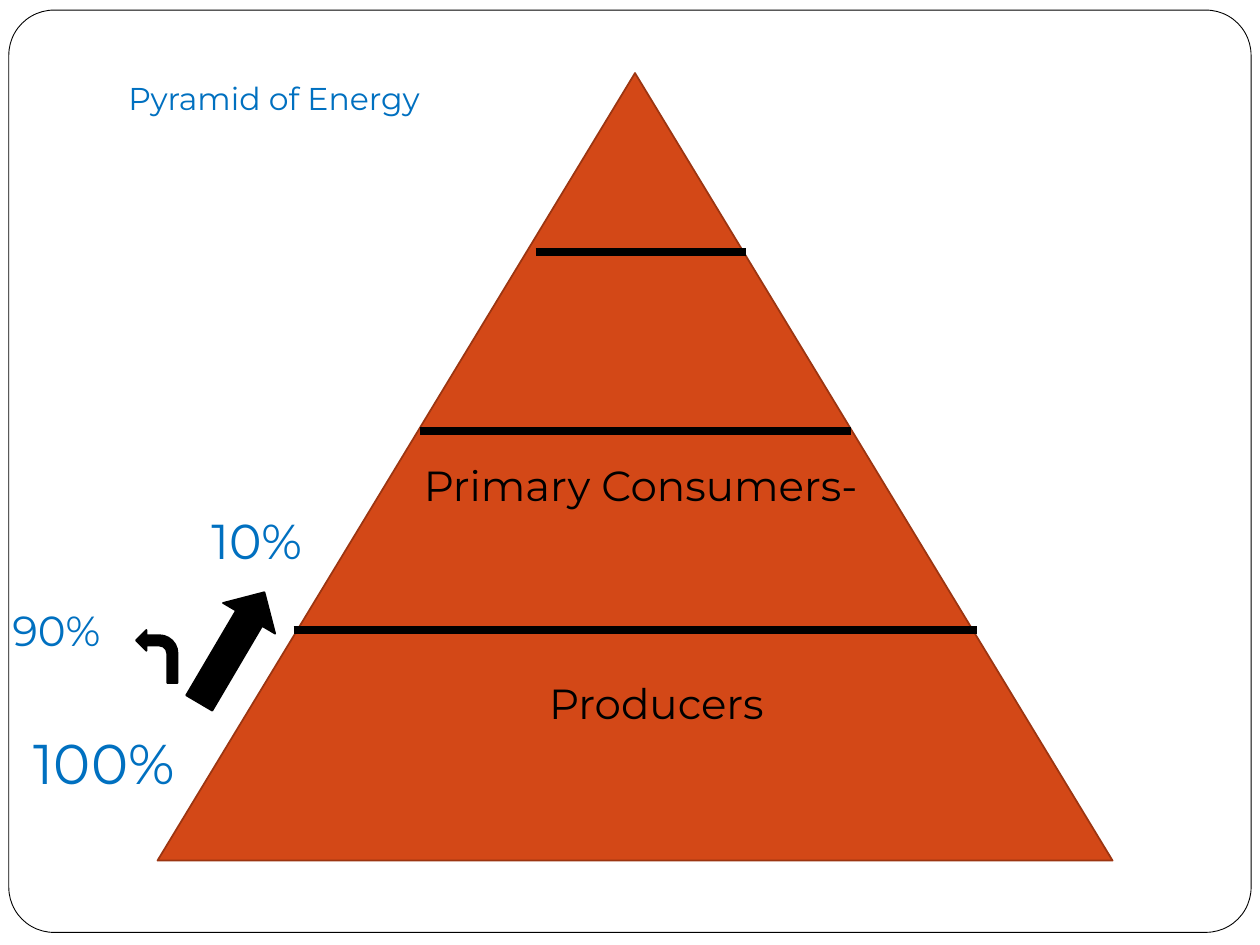
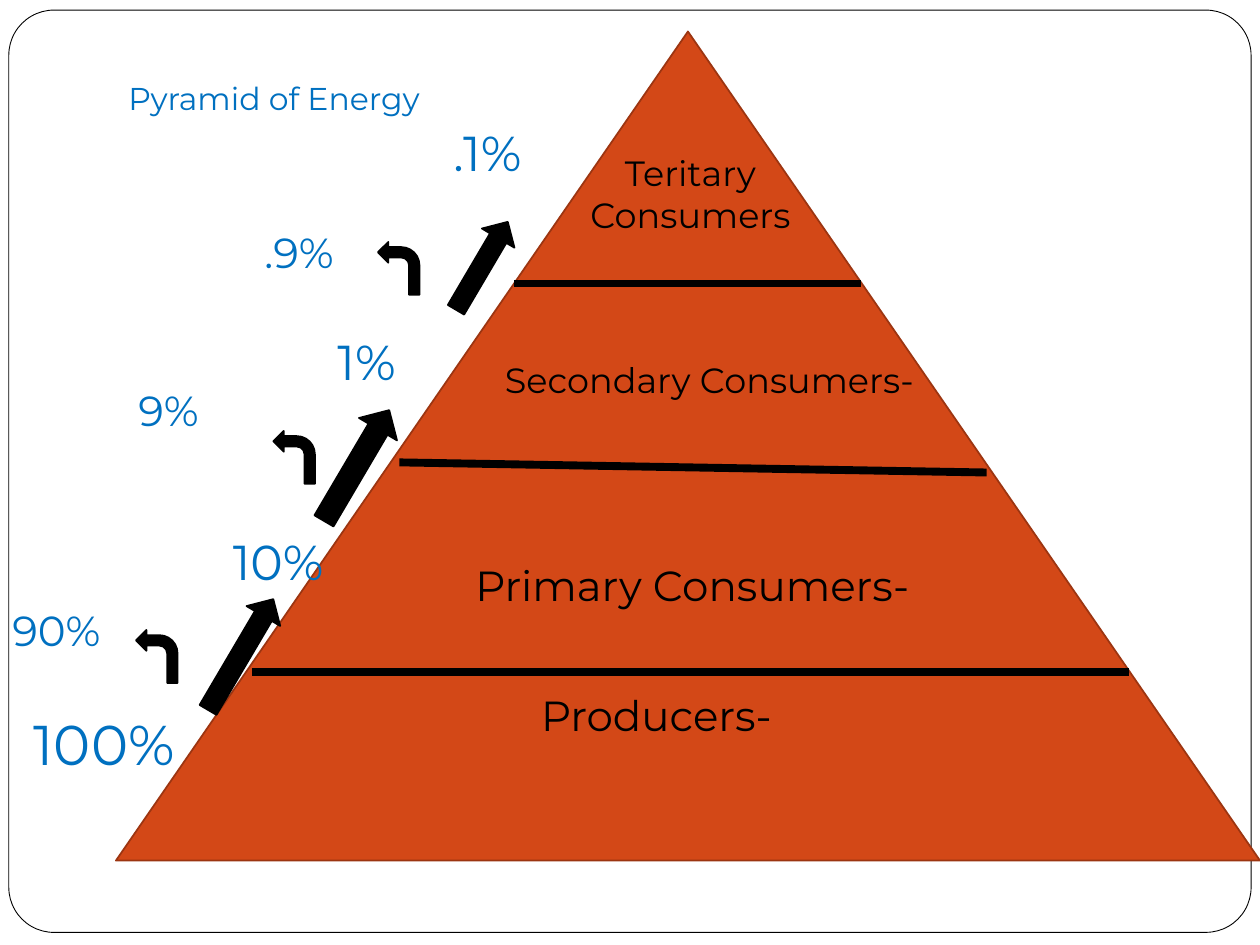
from dataclasses import dataclass

from lxml.etree import SubElement
from pptx import Presentation
from pptx.dml.color import RGBColor
from pptx.enum.shapes import MSO_CONNECTOR as Connector, MSO_SHAPE as Shape
from pptx.enum.text import MSO_AUTO_SIZE as AutoSize, PP_ALIGN as Align
from pptx.oxml.ns import qn
from pptx.util import Inches, Pt

# Shared style
FONT = "Montserrat"
WHITE, BLACK, BLUE = "FFFFFF", "000000", "0070C0"
ORANGE, RUST = "D34817", "9C3511"
ARROW_ANGLE = 300.5
LOSS_SIZE = (0.33, 0.42)


@dataclass
class Label:
    """Text box: a percentage beside the pyramid or a level inside it."""
    text: str
    left: float
    top: float
    width: float
    height: float
    size: int


@dataclass
class Divider:
    """Line between two levels."""
    left: float
    right: float
    start_y: float
    end_y: float


@dataclass
class EnergyArrow:
    """Slanted arrow from one level up to the next."""
    left: float
    top: float
    width: float
    height: float


@dataclass
class EnergyPyramid:
    """Everything that differs from slide to slide."""
    frame: tuple[float, float, float, float]
    dividers: list[Divider]
    levels: list[Label]
    percentages: list[Label]
    arrows: list[EnergyArrow]
    losses: list[tuple[float, float]]


TITLE = Label("Pyramid of Energy", 0.92, 0.58, 2.83, 0.4, 18)
LOST_BY_PRODUCERS = Label("90%", 0, 4.75, 1.33, 0.5, 24)
PRODUCER_LOSS = (1.08, 5)

PYRAMIDS = [
    EnergyPyramid(
        frame=(1.25, 0.58, 7.58, 6.25),
        dividers=[
            Divider(2.33, 7.75, 5, 5),
            Divider(3.33, 6.75, 3.42, 3.42),
            Divider(4.25, 5.92, 2, 2),
        ],
        levels=[
            Label("Primary Consumers-", 2.17, 3.6, 5.83, 0.81, 24),
            Label("Producers", 2.42, 5.33, 5.58, 0.5, 24),
        ],
        percentages=[
            Label("100%", 0.17, 5.73, 1.83, 0.64, 32),
            LOST_BY_PRODUCERS,
            Label("10%", 1.58, 4, 1.33, 0.57, 28),
        ],
        arrows=[EnergyArrow(1.33, 4.9, 1.02, 0.48)],
        losses=[PRODUCER_LOSS],
    ),
    EnergyPyramid(
        frame=(0.92, 0.25, 9.08, 6.58),
        dividers=[
            Divider(2, 8.96, 5.33, 5.33),
            Divider(3.17, 7.83, 3.67, 3.75),
            Divider(4.08, 6.83, 2.25, 2.25),
        ],
        levels=[
            Label("Producers-", 2.42, 5.42, 5.58, 0.5, 24),
            Label("Primary Consumers-", 2.58, 4.39, 5.83, 0.81, 24),
            Label("Secondary Consumers-", 3.17, 2.8, 4.92, 0.74, 20),
            Label("Teritary\nConsumers", 4.19, 1.15, 2.58, 0.77, 20),
        ],
        percentages=[
            Label("100%", 0.17, 5.58, 1.83, 0.64, 32),
            LOST_BY_PRODUCERS,
            Label("10%", 1.75, 4.17, 1.33, 0.57, 28),
            Label("9%", 1, 3, 0.92, 0.5, 24),
            Label("1%", 2.58, 2.58, 1.08, 0.57, 28),
            Label(".9%", 2, 1.75, 0.92, 0.5, 24),
            Label(".1%", 3.5, 0.92, 1.08, 0.57, 28),
        ],
        arrows=[
            EnergyArrow(1.4, 5.04, 1.02, 0.31),
            EnergyArrow(2.32, 3.52, 1.02, 0.35),
            EnergyArrow(3.42, 1.96, 0.81, 0.3),
        ],
        losses=[PRODUCER_LOSS, (2.17, 3.42), (3, 1.92)],
    ),
]


def color(value: str) -> RGBColor:
    return RGBColor.from_string(value)


def add_text(page, label: Label, *, fill: str = BLUE, align: Align = Align.LEFT) -> None:
    box = page.shapes.add_textbox(Inches(label.left), Inches(label.top),
                                  Inches(label.width), Inches(label.height))
    frame = box.text_frame
    frame.word_wrap = True
    frame.auto_size = AutoSize.SHAPE_TO_FIT_TEXT
    frame.text = label.text
    for para in frame.paragraphs:
        para.alignment = align
        for span in para.runs:
            span.font.name = FONT
            span.font.size = Pt(label.size)
            span.font.color.rgb = color(fill)


def add_filled(page, kind: Shape, left: float, top: float, width: float, height: float,
               *, fill: str = BLACK, line: str = BLACK, weight: float = 1):
    shape = page.shapes.add_shape(kind, Inches(left), Inches(top),
                                  Inches(width), Inches(height))
    shape.shadow.inherit = False
    shape.fill.solid()
    shape.fill.fore_color.rgb = color(fill)
    shape.line.color.rgb = color(line)
    shape.line.width = Pt(weight)
    return shape


def add_divider(page, divider: Divider) -> None:
    line = page.shapes.add_connector(
        Connector.STRAIGHT, Inches(divider.left), Inches(divider.start_y),
        Inches(divider.right), Inches(divider.end_y))
    line.line.color.rgb = color(BLACK)
    line.line.width = Pt(4.5)
    SubElement(line.element.spPr, qn("a:effectLst"))


def add_energy_arrow(page, arrow: EnergyArrow) -> None:
    shape = add_filled(page, Shape.RIGHT_ARROW, arrow.left, arrow.top,
                       arrow.width, arrow.height)
    shape.rotation = ARROW_ANGLE


def add_loss_arrow(page, left: float, top: float) -> None:
    shape = add_filled(page, Shape.BENT_ARROW, left, top, *LOSS_SIZE)
    for index, value in enumerate((0.25, 0.25, 0.25, 0.438)):
        shape.adjustments[index] = value
    # Mirror the arrow so that it points left
    shape.element.spPr.find(qn("a:xfrm")).set("flipH", "1")


def add_page(deck, pyramid: EnergyPyramid) -> None:
    page = deck.slides.add_slide(deck.slide_layouts[6])

    # Rounded border and title
    border = add_filled(page, Shape.ROUNDED_RECTANGLE, 0.07, 0.08, 9.86, 7.32,
                        fill=WHITE, weight=0.5)
    border.adjustments[0] = 0.049
    add_text(page, TITLE)

    # Pyramid and its levels
    add_filled(page, Shape.FLOWCHART_EXTRACT, *pyramid.frame, fill=ORANGE, line=RUST)
    for divider in pyramid.dividers:
        add_divider(page, divider)
    for level in pyramid.levels:
        add_text(page, level, fill=BLACK, align=Align.CENTER)

    # Energy passed on and lost
    for arrow in pyramid.arrows:
        add_energy_arrow(page, arrow)
    for left, top in pyramid.losses:
        add_loss_arrow(page, left, top)
    for percentage in pyramid.percentages:
        add_text(page, percentage)


def main() -> None:
    deck = Presentation()
    deck.slide_width = Inches(10)
    deck.slide_height = Inches(7.5)
    for pyramid in PYRAMIDS:
        add_page(deck, pyramid)
    deck.save("out.pptx")


if __name__ == "__main__":
    main()
